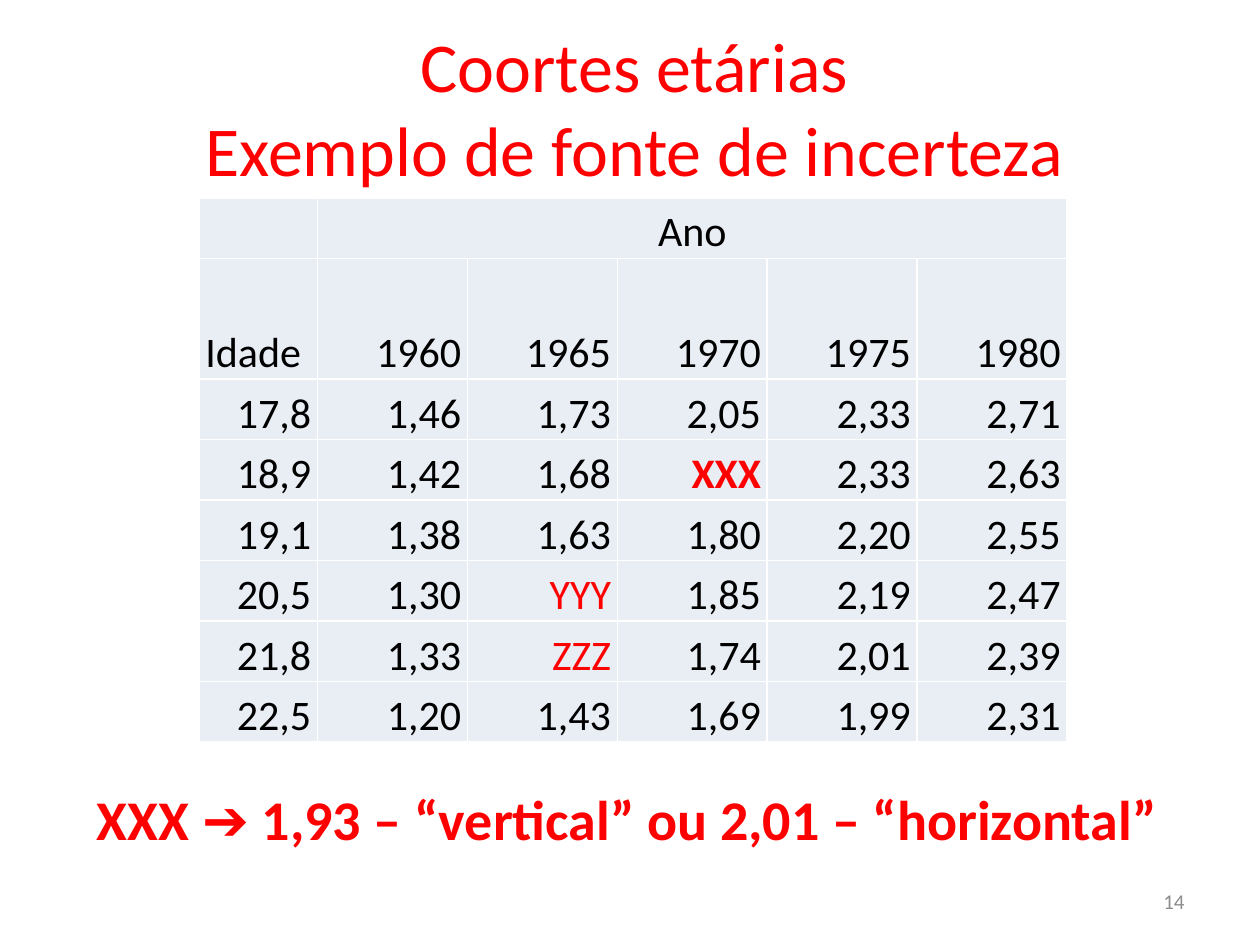
from lxml import etree
from pptx import Presentation
from pptx import util as u
from pptx.dml.color import RGBColor
from pptx.enum import text
from pptx.oxml.ns import qn

COLORS = {"red": "FF0000", "black": "000000", "gray": "8C8C8C",
          "cell": "E9EDF4", "border": "FFFFFF"}
FONT = "Calibri"
LEFT, CENTER, RIGHT = text.PP_ALIGN.LEFT, text.PP_ALIGN.CENTER, text.PP_ALIGN.RIGHT
TOP, MIDDLE, BOTTOM = text.MSO_ANCHOR.TOP, text.MSO_ANCHOR.MIDDLE, text.MSO_ANCHOR.BOTTOM

TITLE = ["Coortes etárias", "Exemplo de fonte de incerteza"]
ROWS = [
    ["", "Ano", "", "", "", ""],
    ["Idade", "1960", "1965", "1970", "1975", "1980"],
    ["17,8", "1,46", "1,73", "2,05", "2,33", "2,71"],
    ["18,9", "1,42", "1,68", "XXX", "2,33", "2,63"],
    ["19,1", "1,38", "1,63", "1,80", "2,20", "2,55"],
    ["20,5", "1,30", "YYY", "1,85", "2,19", "2,47"],
    ["21,8", "1,33", "ZZZ", "1,74", "2,01", "2,39"],
    ["22,5", "1,20", "1,43", "1,69", "1,99", "2,31"],
]
ALIGNMENTS = {"Ano": CENTER, "Idade": LEFT}
HIGHLIGHTS = {"XXX": {"color": "red", "bold": True},
              "YYY": {"color": "red"}, "ZZZ": {"color": "red"}}
ANSWER = ["XXX ➔ 1,93 – “vertical” ou 2,01 – “horizontal”"]
PAGE_NUMBER = ["14"]

TABLE_PLACE = (1.58, 1.57, 6.91, 4.31)
COLUMN_WIDTHS = [0.94] + [1.19] * 5
ROW_HEIGHTS = [0.48, 0.96] + [0.48] * 6


def set_values(target, values):
    for name, value in values.items():
        setattr(target, name, value)


def write(frame, lines, size, color, align=LEFT, bold=False):
    for index, line in enumerate(lines):
        para = frame.paragraphs[0] if index == 0 else frame.add_paragraph()
        para.alignment = align
        span = para.add_run()
        span.text = line
        set_values(span.font, {"name": FONT, "size": u.Pt(size), "bold": bold})
        span.font.color.rgb = RGBColor.from_string(COLORS[color])


def place(box, left, top, width, height, anchor=TOP):
    set_values(box, {"left": u.Inches(left), "top": u.Inches(top),
                     "width": u.Inches(width), "height": u.Inches(height)})
    set_values(box.text_frame, {"word_wrap": True, "vertical_anchor": anchor,
                                "auto_size": text.MSO_AUTO_SIZE.NONE})
    return box.text_frame


def add_borders(cell):
    properties = cell._tc.get_or_add_tcPr()
    for index, side in enumerate(("lnL", "lnR", "lnT", "lnB")):
        line = etree.Element(qn(f"a:{side}"), w=str(u.Pt(1)))
        fill = etree.SubElement(line, qn("a:solidFill"))
        etree.SubElement(fill, qn("a:srgbClr"), val=COLORS["border"])
        properties.insert(index, line)


def add_cohort_table(page):
    table = page.shapes.add_table(len(ROWS), len(COLUMN_WIDTHS),
                                  *map(u.Inches, TABLE_PLACE)).table
    set_values(table, {"first_row": False, "horz_banding": False})
    for column, width in zip(table.columns, COLUMN_WIDTHS):
        column.width = u.Inches(width)
    for row, height, values in zip(table.rows, ROW_HEIGHTS, ROWS):
        row.height = u.Inches(height)
        for cell, value in zip(row.cells, values):
            set_values(cell, {"margin_left": u.Inches(0.05), "margin_right": u.Inches(0.05),
                              "margin_top": 0, "margin_bottom": 0,
                              "vertical_anchor": BOTTOM})
            cell.fill.solid()
            cell.fill.fore_color.rgb = RGBColor.from_string(COLORS["cell"])
            add_borders(cell)
            if value:
                style = {"color": "black", **HIGHLIGHTS.get(value, {})}
                write(cell.text_frame, [value], 24,
                      align=ALIGNMENTS.get(value, RIGHT), **style)
    table.cell(0, 1).merge(table.cell(0, len(COLUMN_WIDTHS) - 1))


def main():
    """Build the age cohort slide."""
    deck = Presentation()
    set_values(deck, {"slide_width": u.Inches(10), "slide_height": u.Inches(7.5)})
    page = deck.slides.add_slide(deck.slide_layouts[5])
    add_cohort_table(page)
    title = place(page.shapes.title, 0.98, 0.13, 8.11, 1.45)
    write(title, TITLE, 40, "red", CENTER)
    answer = place(page.shapes.add_textbox(0, 0, 0, 0), 0.67, 6.18, 9.06, 0.64)
    write(answer, ANSWER, 32, "red", bold=True)
    number = place(page.shapes.add_textbox(0, 0, 0, 0), 7.17, 6.95, 2.33, 0.4, MIDDLE)
    write(number, PAGE_NUMBER, 12, "gray", RIGHT)
    deck.save("out.pptx")


if __name__ == "__main__":
    main()
